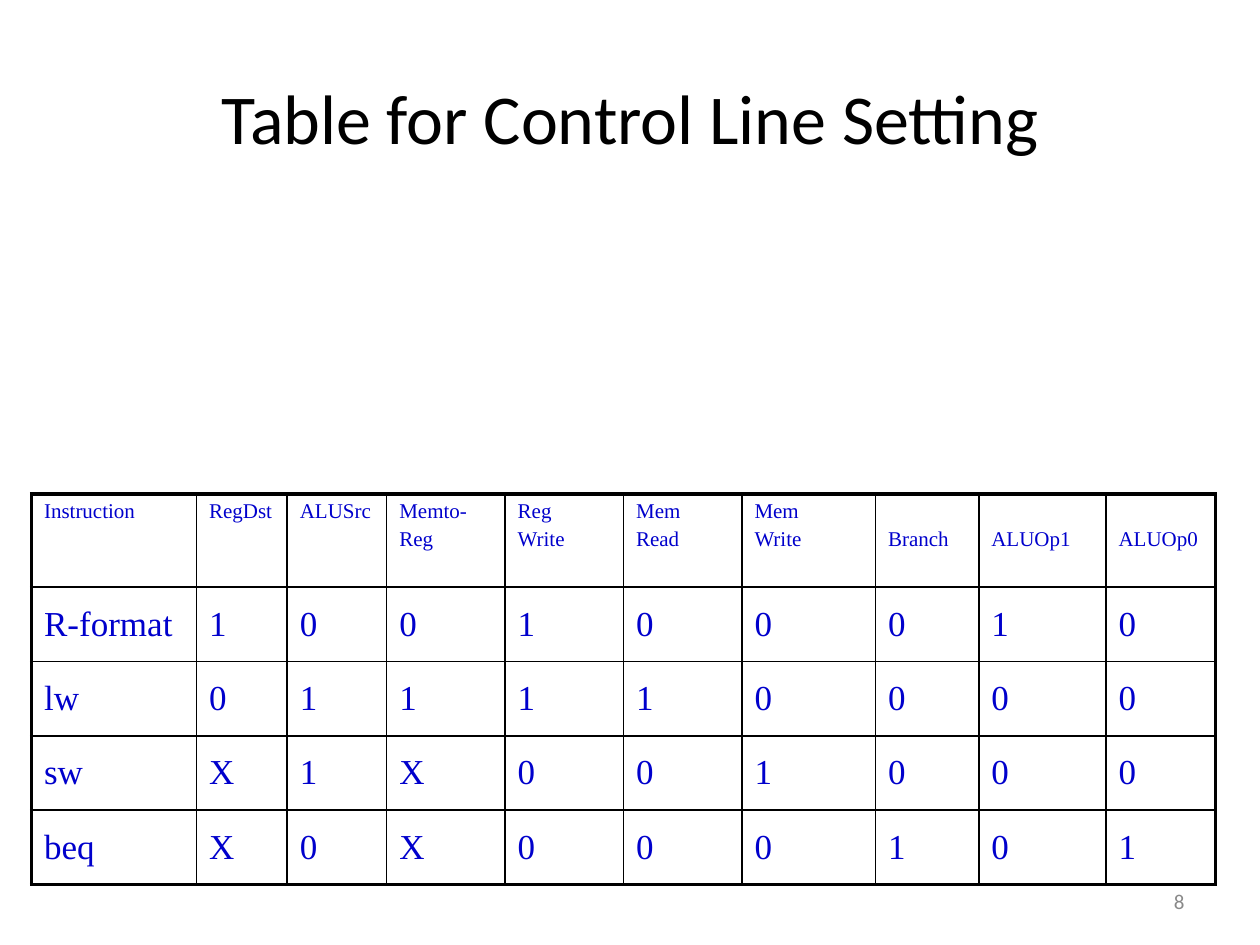
import pptx
import pptx.util
import pptx.dml.color
import pptx.enum.text
import pptx.oxml
import pptx.oxml.ns

Inches, Pt = pptx.util.Inches, pptx.util.Pt
Align, Anchor = pptx.enum.text.PP_ALIGN, pptx.enum.text.MSO_ANCHOR
COLORS = {"ink": "000000", "cell": "0000CC", "page": "898989"}

deck = pptx.Presentation()
deck.slide_width, deck.slide_height = Inches(10), Inches(7.5)
wide, high = deck.slide_width, deck.slide_height
slide = deck.slides.add_slide(deck.slide_layouts[6])


def style(para, face, size, color):
    para.font.name = face
    para.font.size = Pt(size)
    para.font.color.rgb = pptx.dml.color.RGBColor.from_string(COLORS[color])


def border(cell, side, width):
    cell._tc.get_or_add_tcPr().append(pptx.oxml.parse_xml(
        f'<a:ln{side} {pptx.oxml.ns.nsdecls("a")} w="{Pt(width)}"><a:solidFill>'
        f'<a:srgbClr val="{COLORS["ink"]}"/></a:solidFill></a:ln{side}>'))


# Title and page number, placed as shares of the slide
labels = [
    ("Table for Control Line Setting", 0.05, 0.04, 0.9, 0.167, 40, "ink", Align.CENTER),
    ("8", 0.717, 0.927, 0.233, 0.053, 12, "page", Align.RIGHT),
]
for text, x, y, w, h, size, color, align in labels:
    box = slide.shapes.add_textbox(int(x * wide), int(y * high), int(w * wide), int(h * high))
    frame = box.text_frame
    frame.word_wrap = True
    frame.vertical_anchor = Anchor.MIDDLE
    para = frame.paragraphs[0]
    para.text = text
    para.alignment = align
    style(para, "Calibri", size, color)

# Control line table
heads = ["Instruction", "RegDst", "ALUSrc", "Memto-\nReg", "Reg\nWrite",
         "Mem\nRead", "Mem\nWrite", "Branch", "ALUOp1", "ALUOp0"]
codes = {"R-format": "100100010", "lw": "011110000",
         "sw": "X1X001000", "beq": "X0X000101"}
rows = [heads] + [[name, *bits] for name, bits in codes.items()]
widths = [1.31, 0.72, 0.79, 0.94, 0.94, 0.94, 1.06, 0.82, 1.01, 0.87]
heights = [0.74] + [0.59] * len(codes)
last_row, last_col = len(rows) - 1, len(heads) - 1

table = slide.shapes.add_table(
    len(rows), len(heads), Inches(0.25), Inches(3.92),
    Inches(sum(widths)), Inches(sum(heights))).table
table.first_row = table.horz_banding = False
for col, width in zip(table.columns, widths):
    col.width = Inches(width)
for row, height in zip(table.rows, heights):
    row.height = Inches(height)

for r, texts in enumerate(rows):
    size = 20 if r else 12
    for c, text in enumerate(texts):
        cell = table.cell(r, c)
        cell.text = text
        cell.vertical_anchor = Anchor.MIDDLE if r else Anchor.TOP
        # The last three heads sit on the second line
        if r == 0 and c > last_col - 3:
            cell.margin_top = Inches(0.27)
        for para in cell.text_frame.paragraphs:
            para.space_before = Pt(0.2 * size)
            style(para, "Times New Roman", size, "cell")
        # Heavy outer frame, thin inner rules
        edges = {"L": c == 0, "R": c == last_col, "T": r == 0, "B": r == last_row}
        for side, outer in edges.items():
            border(cell, side, 2.25 if outer else 1)
        cell.fill.background()

deck.save("out.pptx")
